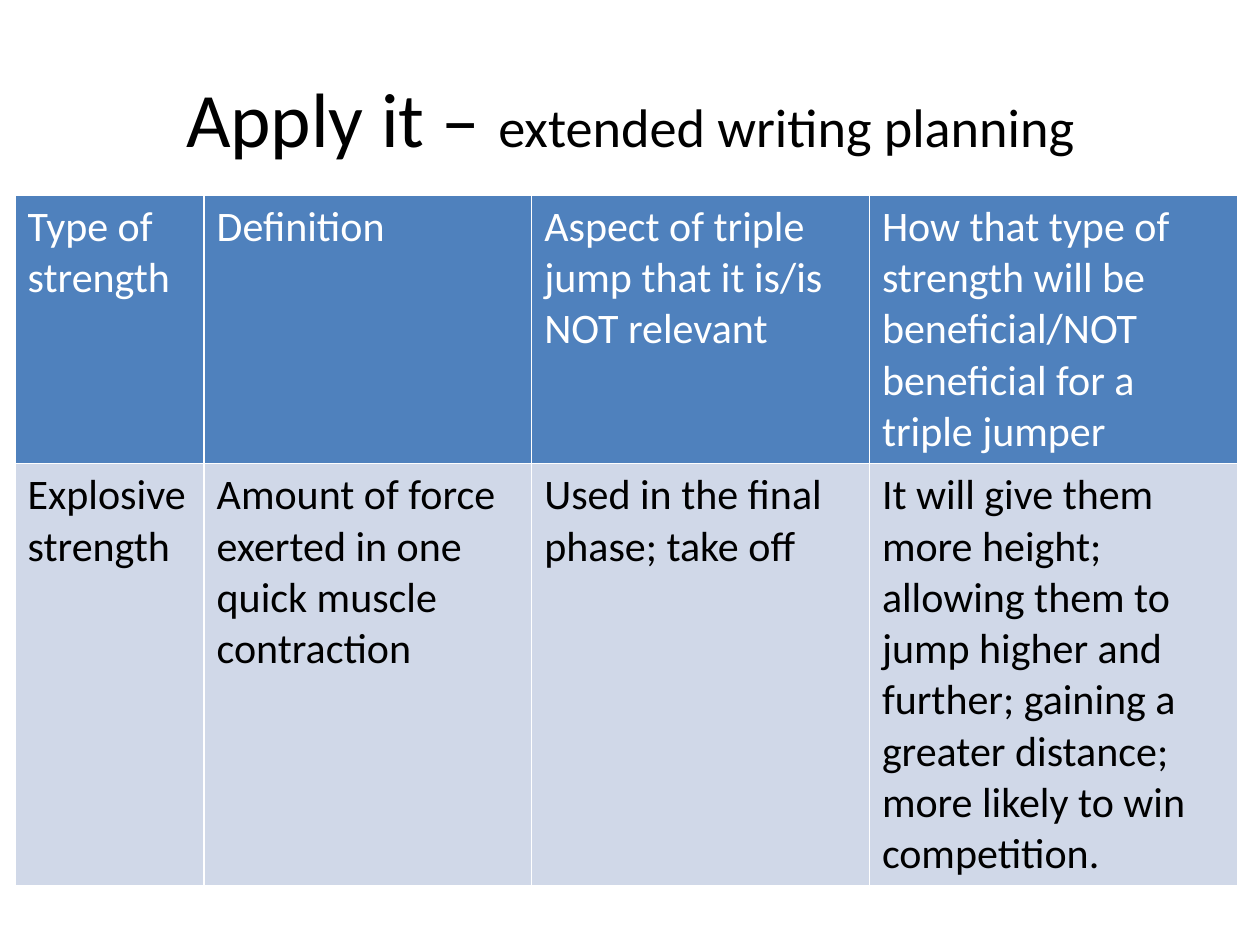
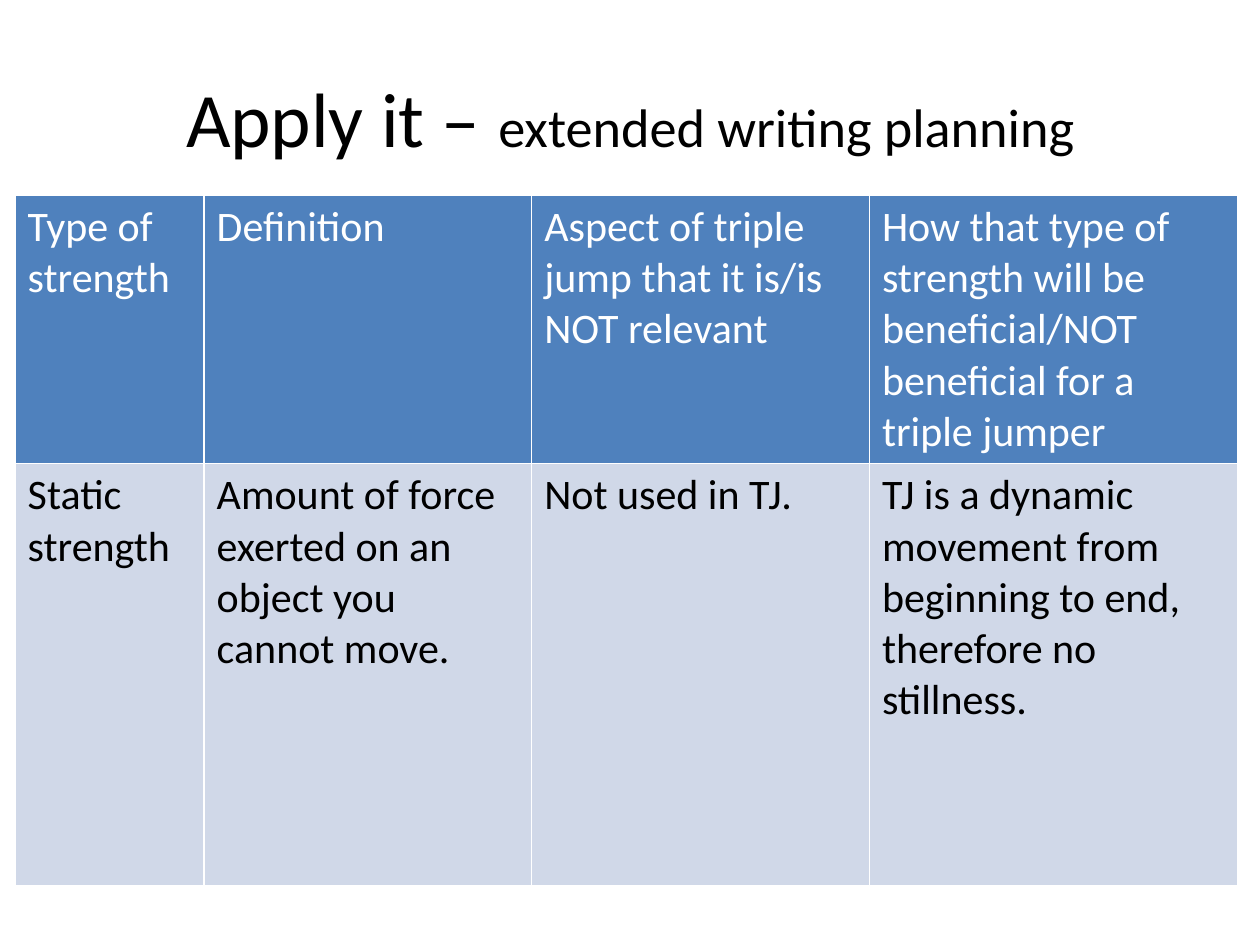
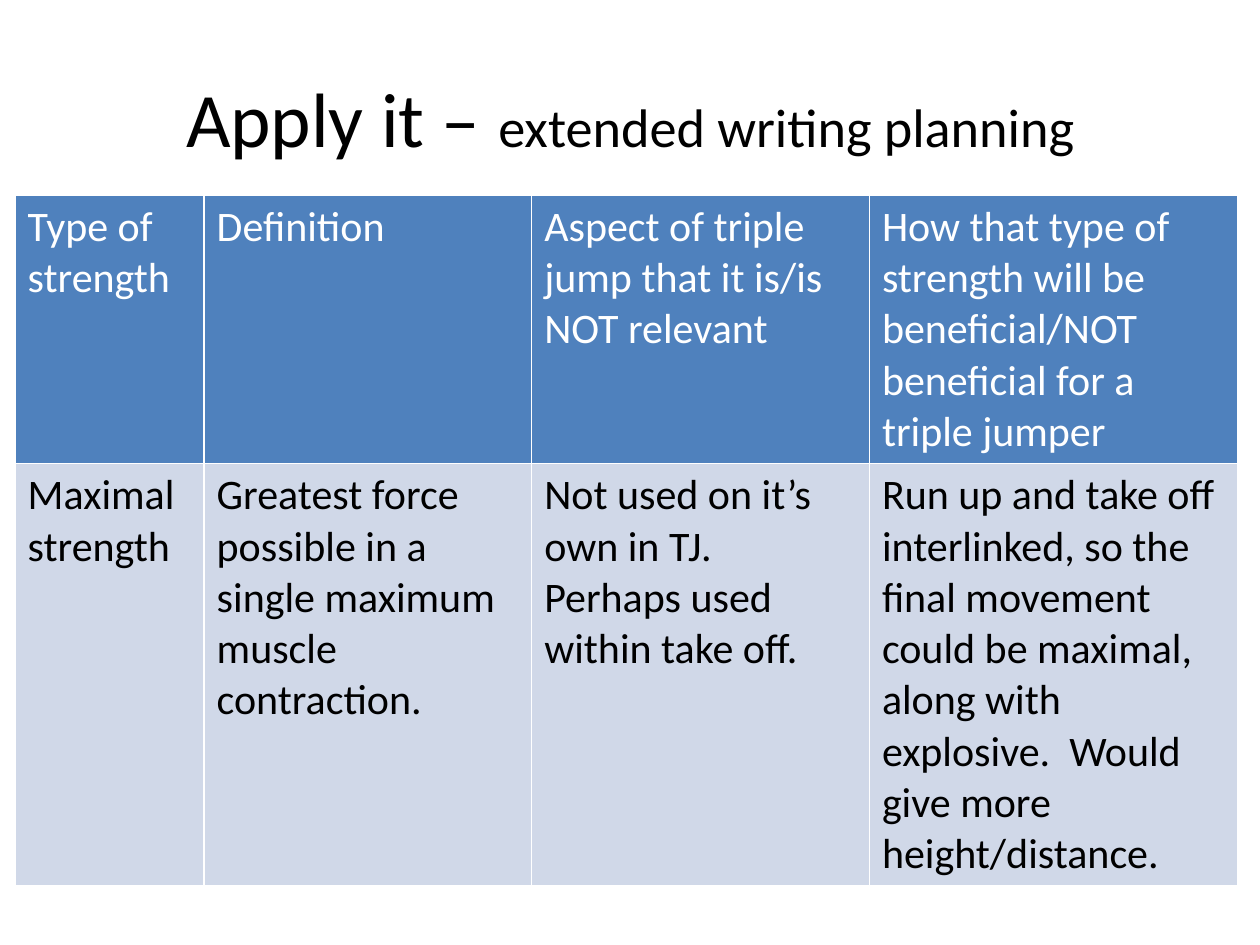
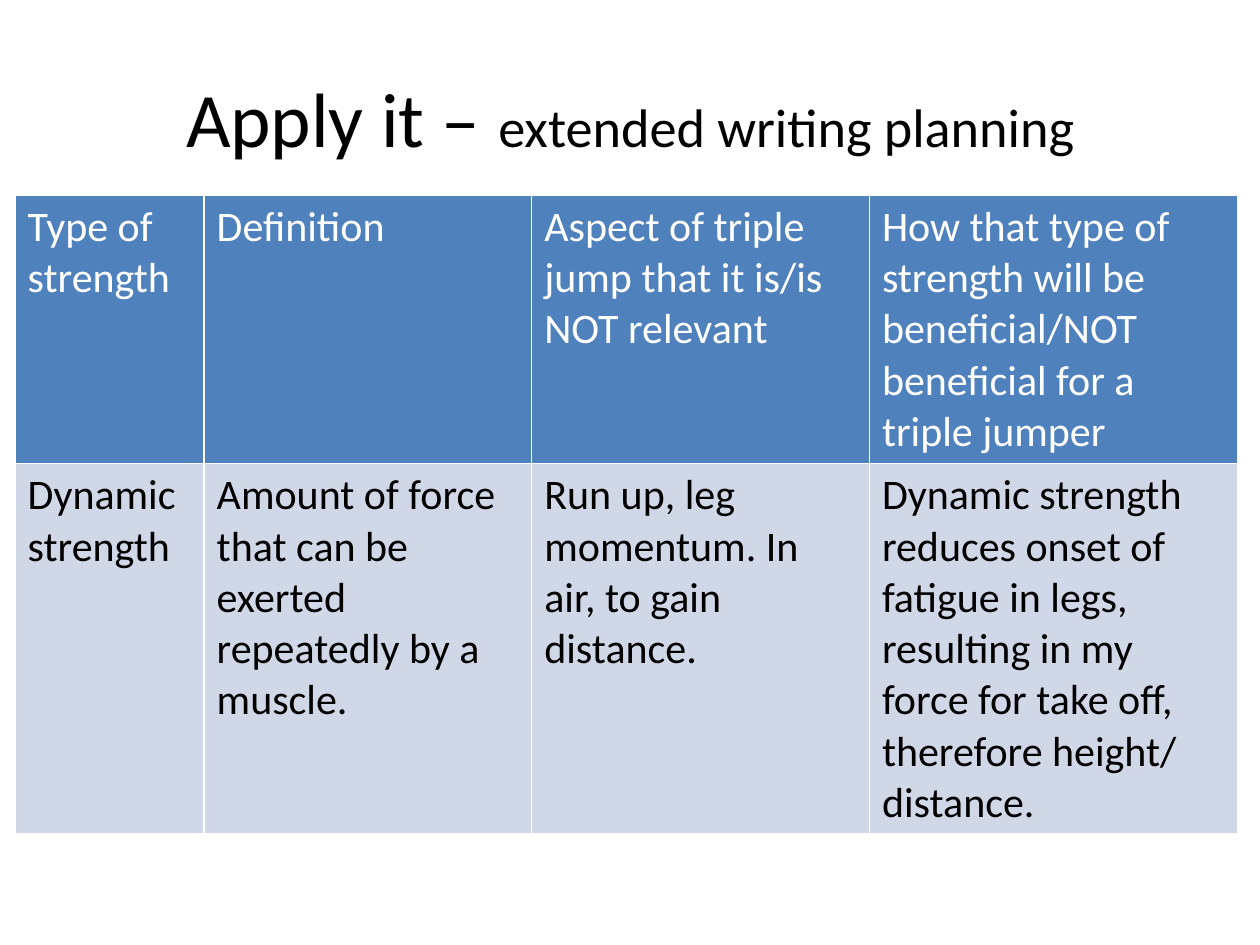
"""Build four planning slides on types of strength in the triple jump."""
from lxml.etree import SubElement
from pptx import Presentation
from pptx.dml.color import RGBColor
from pptx.enum.text import MSO_ANCHOR, PP_ALIGN
from pptx.oxml.ns import qn
from pptx.util import Inches, Pt

COLORS = {"text": "000000", "header": "4F81BD", "body": "D0D8E8", "white": "FFFFFF"}
FONT = "Calibri"
TITLE = [("Apply it – ", 44), ("extended writing planning", 31)]
CELL_SIZE = 24
HEADINGS = [
    "Type of strength",
    "Definition",
    "Aspect of triple jump that it is/is NOT relevant",
    "How that type of strength will be beneficial/NOT beneficial for a triple jumper",
]
STRENGTHS = [
    (
        "Explosive strength",
        "Amount of force exerted in one quick muscle contraction",
        "Used in the final phase; take off",
        "It will give them more height; allowing them to jump higher and further; "
        "gaining a greater distance; more likely to win competition.",
    ),
    (
        "Static strength",
        "Amount of force exerted on an object you cannot move.",
        "Not used in TJ.",
        "TJ is a dynamic movement from beginning to end, therefore no stillness.",
    ),
    (
        "Maximal strength",
        "Greatest force possible in a single maximum muscle contraction.",
        "Not used on it’s own in TJ. Perhaps used within take off.",
        "Run up and take off interlinked, so the final movement could be maximal, "
        "along with explosive.  Would give more height/distance.",
    ),
    (
        "Dynamic strength",
        "Amount of force that can be exerted repeatedly by a muscle.",
        "Run up, leg momentum. In air, to gain distance.",
        "Dynamic strength reduces onset of fatigue in legs, resulting in my force "
        "for take off, therefore height/ distance.",
    ),
]
COLUMN_WIDTHS = [1.5, 2.6, 2.68, 2.92]
HEADER_HEIGHT = 2.13
BODY_HEIGHTS = [3.35, 3.35, 3.35, 2.94]


def style_span(span, size, color):
    span.font.name = FONT
    span.font.size = Pt(size)
    span.font.bold = False
    span.font.color.rgb = RGBColor.from_string(COLORS[color])


def add_title(page):
    box = page.shapes.add_textbox(Inches(0.5), Inches(0.3), Inches(9), Inches(1.25))
    box.text_frame.word_wrap = True
    box.text_frame.vertical_anchor = MSO_ANCHOR.MIDDLE
    para = box.text_frame.paragraphs[0]
    para.alignment = PP_ALIGN.CENTER
    for text, size in TITLE:
        span = para.add_run()
        span.text = text
        style_span(span, size, "text")


def add_borders(cell):
    properties = cell._tc.get_or_add_tcPr()
    for side in ("lnL", "lnR", "lnT", "lnB"):
        line = SubElement(properties, qn(f"a:{side}"), w=str(Pt(1)))
        fill = SubElement(line, qn("a:solidFill"))
        SubElement(fill, qn("a:srgbClr"), val=COLORS["white"])


def fill_cell(cell, text, fill, color):
    add_borders(cell)
    cell.fill.solid()
    cell.fill.fore_color.rgb = RGBColor.from_string(COLORS[fill])
    cell.text_frame.text = text
    style_span(cell.text_frame.paragraphs[0].runs[0], CELL_SIZE, color)


def add_strength_table(page, strength, body_height):
    heights = [HEADER_HEIGHT, body_height]
    frame = page.shapes.add_table(
        len(heights), len(COLUMN_WIDTHS), Inches(0.12), Inches(1.55),
        Inches(sum(COLUMN_WIDTHS)), Inches(sum(heights)),
    )
    table = frame.table
    for column, width in zip(table.columns, COLUMN_WIDTHS):
        column.width = Inches(width)
    rows = [(HEADINGS, "header", "white"), (strength, "body", "text")]
    for row, height, (texts, fill, color) in zip(table.rows, heights, rows):
        row.height = Inches(height)
        for cell, text in zip(row.cells, texts):
            fill_cell(cell, text, fill, color)


def main():
    deck = Presentation()
    deck.slide_width, deck.slide_height = Inches(10), Inches(7.5)
    for strength, body_height in zip(STRENGTHS, BODY_HEIGHTS):
        page = deck.slides.add_slide(deck.slide_layouts[6])
        add_title(page)
        add_strength_table(page, strength, body_height)
    deck.save("out.pptx")


if __name__ == "__main__":
    main()
